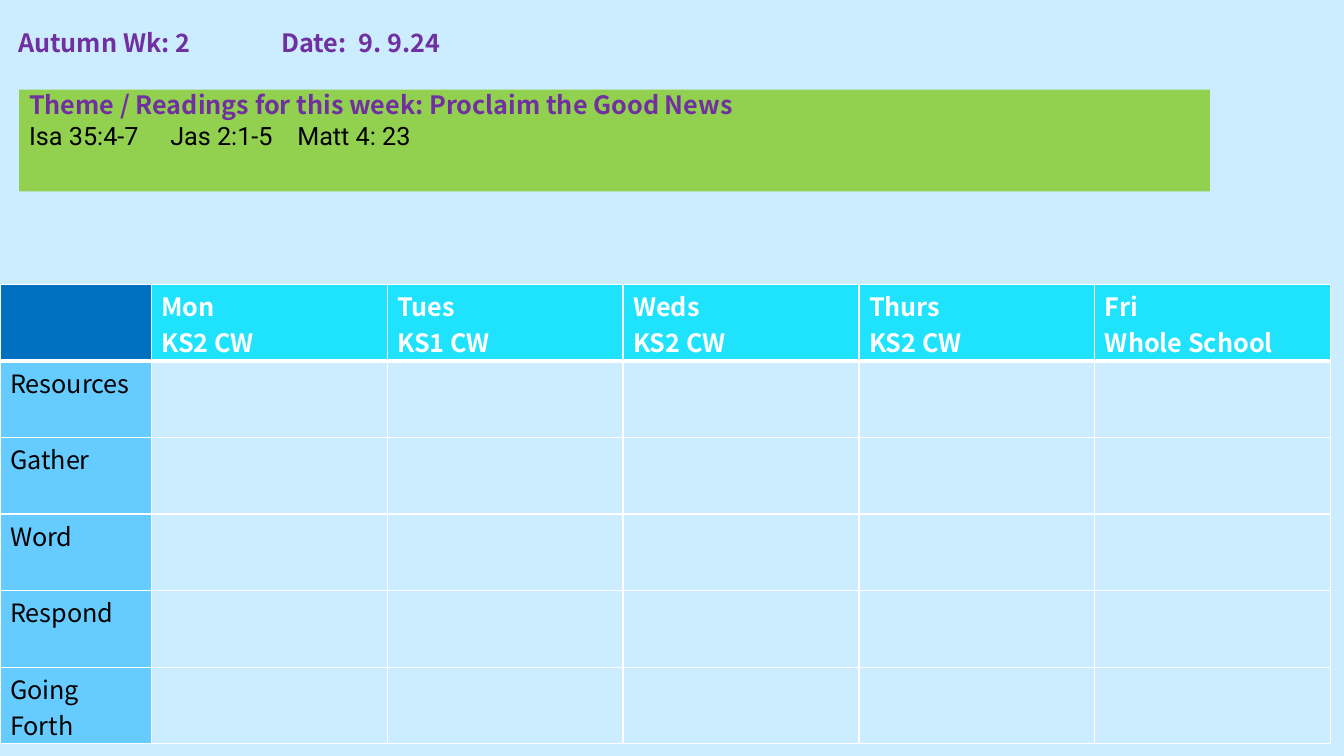
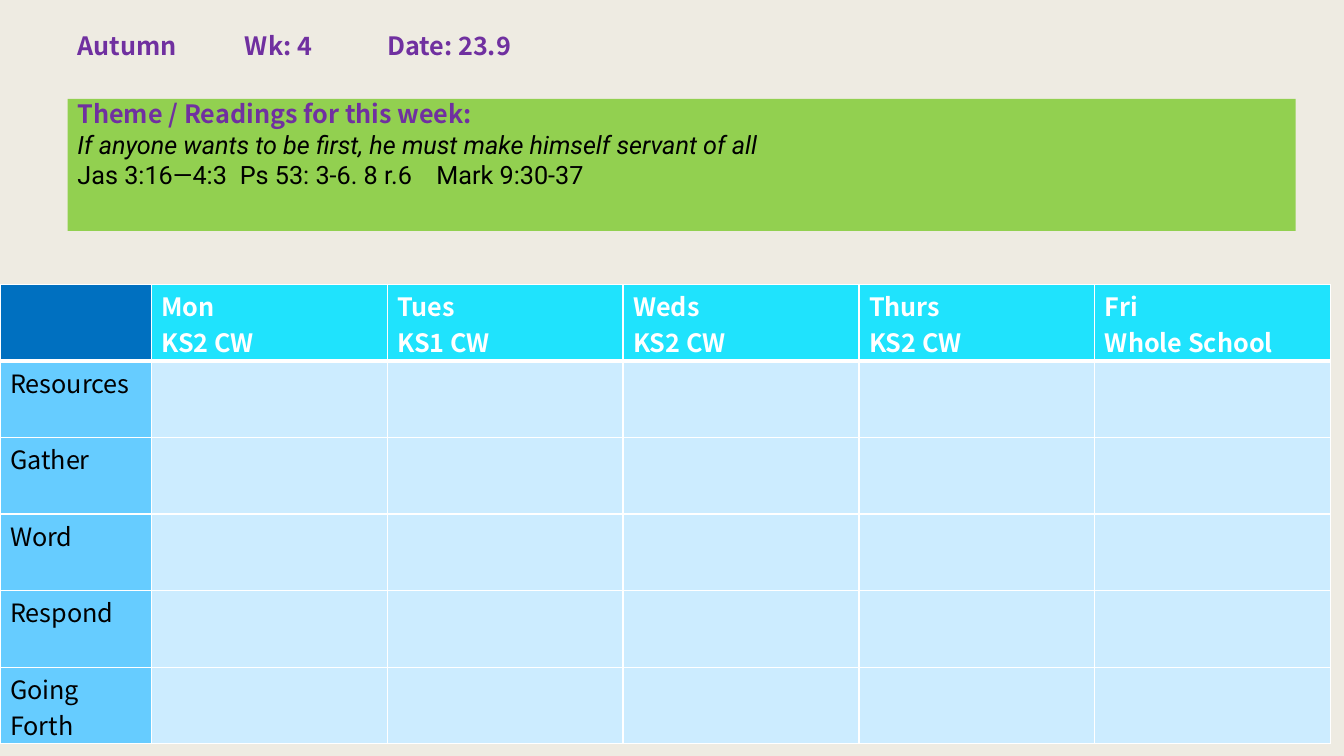
from dataclasses import dataclass

from lxml.etree import SubElement
from pptx import Presentation
from pptx.dml.color import RGBColor
from pptx.enum.shapes import MSO_SHAPE
from pptx.enum.text import MSO_ANCHOR, MSO_AUTO_SIZE, PP_ALIGN
from pptx.oxml.ns import qn
from pptx.util import Inches, Pt


@dataclass(frozen=True)
class Theme:
    heading: str = "7030A0"
    text: str = "000000"
    white: str = "FFFFFF"
    sky: str = "CCECFF"
    sand: str = "EEEBE2"
    band: str = "92D050"
    corner: str = "0070C0"
    day: str = "1FE3FD"
    stage: str = "66CCFF"
    head_font: str = "Noto Sans CJK JP"
    body_font: str = "Roboto"
    size: int = 18
    rule: int = 1
    header_rule: int = 3


T = Theme()
SLIDE_W, SLIDE_H = 13.33, 7.5
TABLE_TOP, STAGE_W, DAY_W, ROW_H = 2.82, 1.5, 2.34, 0.76
TITLE_W, TITLE_H = 12.18, 0.4

DAYS = [("Mon", "KS2 CW"), ("Tues", "KS1 CW"), ("Weds", "KS2 CW"),
        ("Thurs", "KS2 CW"), ("Fri", "Whole School")]
STAGES = ["Resources", "Gather", "Word", "Respond", "Going Forth"]


@dataclass(frozen=True)
class Line:
    """One paragraph; tabs are the stops, in inches, for its tab characters."""
    text: str
    tabs: tuple = ()
    color: str = T.text
    font: str = T.body_font
    bold: bool = False
    italic: bool = False


def heading(text, tabs=(), color=T.heading):
    return Line(text, tabs, color, T.head_font, bold=True)


def rgb(color):
    return RGBColor.from_string(color)


def paint(fill, color):
    fill.solid()
    fill.fore_color.rgb = rgb(color)


def write(tf, lines):
    for i, line in enumerate(lines):
        p = tf.paragraphs[0] if i == 0 else tf.add_paragraph()
        p.alignment = PP_ALIGN.LEFT
        if line.tabs:
            stops = SubElement(p._p.get_or_add_pPr(), qn("a:tabLst"))
            for pos in line.tabs:
                SubElement(stops, qn("a:tab"), pos=str(Inches(pos)), algn="l")
        r = p.add_run()
        r.text = line.text
        f = r.font
        f.name, f.size = line.font, Pt(T.size)
        f.bold, f.italic = line.bold, line.italic
        f.color.rgb = rgb(line.color)


def fill_frame(sp, lines):
    tf = sp.text_frame
    tf.word_wrap = True
    tf.auto_size = MSO_AUTO_SIZE.NONE
    tf.vertical_anchor = MSO_ANCHOR.TOP
    tf.margin_top = tf.margin_bottom = 0
    write(tf, lines)


def add_title(s, left, top, line):
    sp = s.shapes.title
    sp.left, sp.top = Inches(left), Inches(top)
    sp.width, sp.height = Inches(TITLE_W), Inches(TITLE_H)
    fill_frame(sp, [line])


def add_readings(s, box, lines):
    sp = s.shapes.add_shape(MSO_SHAPE.RECTANGLE, *map(Inches, box))
    sp.shadow.inherit = False
    paint(sp.fill, T.band)
    sp.line.fill.background()
    fill_frame(sp, lines)


def set_borders(cell, widths):
    tcPr = cell._tc.get_or_add_tcPr()
    for side, width in widths.items():
        ln = SubElement(tcPr, qn(f"a:ln{side}"), w=str(Pt(width)))
        SubElement(SubElement(ln, qn("a:solidFill")), qn("a:srgbClr"), val=T.white)


def style_cell(cell, color, lines=(), header=False):
    cell.margin_top, cell.margin_bottom = Inches(0.03), 0
    widths = {"L": T.rule, "R": T.rule}
    if header:
        widths["T"] = T.rule
    widths["B"] = T.header_rule if header else T.rule
    set_borders(cell, widths)
    paint(cell.fill, color)
    write(cell.text_frame, lines)


def add_week_table(s):
    n_rows, n_cols = len(STAGES) + 1, len(DAYS) + 1
    width = STAGE_W + DAY_W * len(DAYS)
    table = s.shapes.add_table(n_rows, n_cols, 0, Inches(TABLE_TOP),
                               Inches(width), Inches(ROW_H * n_rows)).table
    table.horz_banding = False
    for i, col in enumerate(table.columns):
        col.width = Inches(DAY_W if i else STAGE_W)
    for row in table.rows:
        row.height = Inches(ROW_H)

    style_cell(table.cell(0, 0), T.corner, header=True)
    for c, day in enumerate(DAYS, 1):
        lines = [heading(text, color=T.white) for text in day]
        style_cell(table.cell(0, c), T.day, lines, header=True)
    for r, stage in enumerate(STAGES, 1):
        style_cell(table.cell(r, 0), T.stage, [Line(stage, font=T.head_font)])
        for c in range(1, n_cols):
            style_cell(table.cell(r, c), T.sky)


def add_week(prs, background, title_at, title, box, readings):
    s = prs.slides.add_slide(prs.slide_layouts[5])
    paint(s.background.fill, background)
    add_title(s, *title_at, title)
    add_readings(s, box, readings)
    add_week_table(s)


def main():
    prs = Presentation()
    prs.slide_width, prs.slide_height = Inches(SLIDE_W), Inches(SLIDE_H)
    add_week(prs, T.sky, (0.08, 0.27),
             heading("Autumn Wk: 2\tDate:\t9. 9.24", (2.61, 3.38)),
             (0.19, 0.89, 11.81, 1.01),
             [heading("Theme / Readings for this week: Proclaim the Good News"),
              Line("Isa 35:4-7\tJas 2:1-5\tMatt 4: 23", (1.4, 2.66))])
    add_week(prs, T.sand, (0.67, 0.3),
             heading("Autumn\tWk: 4\tDate: 23.9", (1.66, 3.07)),
             (0.67, 0.98, 12.18, 1.31),
             [heading("Theme / Readings for this week:"),
              Line("If anyone wants to be first, he must make himself servant of all",
                   italic=True),
              Line("Jas 3:16—4:3\tPs 53: 3-6. 8 r.6\tMark 9:30-37", (1.61, 3.56))])
    prs.save("out.pptx")


if __name__ == "__main__":
    main()
